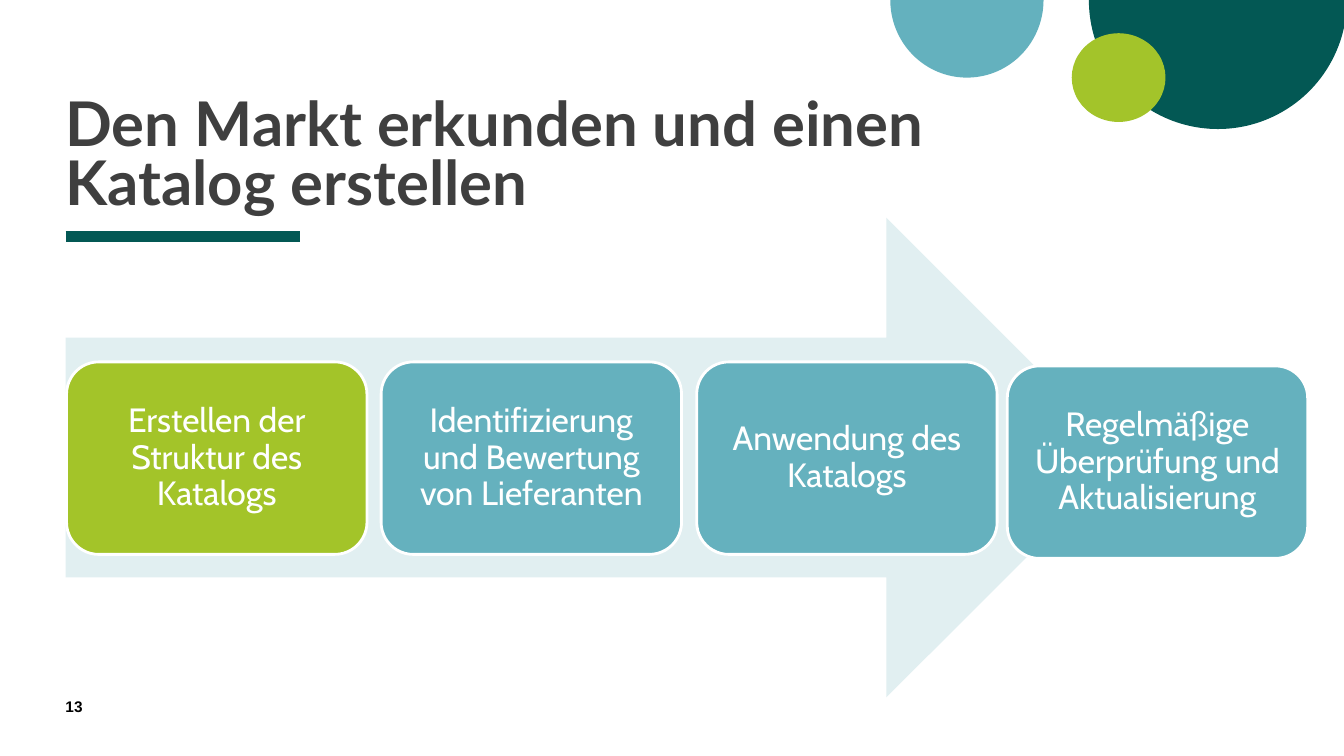
from lxml import etree
from pptx import Presentation
from pptx.dml.color import RGBColor
from pptx.enum.shapes import MSO_CONNECTOR, MSO_SHAPE
from pptx.enum.text import MSO_ANCHOR, PP_ALIGN
from pptx.oxml.ns import qn
from pptx.util import Inches, Pt

PIE, OVAL = MSO_SHAPE.PIE, MSO_SHAPE.OVAL
ARROW, ROUNDED = MSO_SHAPE.RIGHT_ARROW, MSO_SHAPE.ROUNDED_RECTANGLE
STRAIGHT = MSO_CONNECTOR.STRAIGHT
TOP, MIDDLE, BOTTOM = MSO_ANCHOR.TOP, MSO_ANCHOR.MIDDLE, MSO_ANCHOR.BOTTOM
LEFT, CENTER = PP_ALIGN.LEFT, PP_ALIGN.CENTER

DARK_GREEN, TEAL, LIME = "035854", "64B1BE", "A3C42A"
STEP_TEAL, STEP_LIME, PALE, WHITE = "65B1BE", "A3C429", "E1EFF1", "FFFFFF"
HALF_CIRCLE = (0, 108)  # start and end angle, 180 degrees = 108

TITLE = dict(name="Lato", size=Pt(44), bold=True)
NUMBER = dict(name="Arial", size=Pt(11), bold=True)
STEP = dict(name="Cabin", size=Pt(24), bold=False)

STEPS = [
    # left, top, fill, text
    (0.66, 3.59, STEP_LIME, "Erstellen der Struktur des Katalogs"),
    (3.78, 3.59, STEP_TEAL, "Identifizierung und Bewertung von Lieferanten"),
    (6.91, 3.59, STEP_TEAL, "Anwendung des Katalogs"),
    (9.99, 3.63, STEP_TEAL, "Regelmäßige Überprüfung und Aktualisierung"),
]


def rgb(value):
    return RGBColor.from_string(value)


def add_shape(s, kind, box, fill, adjustments=()):
    sp = s.shapes.add_shape(kind, *map(Inches, box))
    sp.shadow.inherit = False
    sp.fill.solid()
    sp.fill.fore_color.rgb = rgb(fill)
    sp.line.fill.background()
    for i, value in enumerate(adjustments):
        sp.adjustments[i] = value
    return sp


def set_text(sp, text, font, color, spacing=1.0, align=LEFT, anchor=TOP, inset=0):
    tf = sp.text_frame
    tf.word_wrap = True
    tf.vertical_anchor = anchor
    for side in ("left", "right", "top", "bottom"):
        setattr(tf, f"margin_{side}", Inches(inset))
    p = tf.paragraphs[0]
    p.alignment = align
    p.line_spacing = spacing
    r = p.add_run()
    r.text = text
    for name, value in font.items():
        setattr(r.font, name, value)
    r.font.color.rgb = rgb(color)


def add_text(s, box, text, font, color, **layout):
    set_text(s.shapes.add_textbox(*map(Inches, box)), text, font, color, **layout)


def add_rule(s, x1, x2, y, color, width):
    line = s.shapes.add_connector(STRAIGHT, *map(Inches, (x1, y, x2, y)))
    line.line.color.rgb = rgb(color)
    line.line.width = Pt(width)
    etree.SubElement(line._element.spPr, qn("a:effectLst"))


def add_step(s, left, top, fill, text):
    sp = add_shape(s, ROUNDED, (left, top, 2.98, 1.91), fill, [0.167])
    sp.line.color.rgb = rgb(WHITE)
    sp.line.width = Pt(2)
    set_text(sp, text, STEP, WHITE, spacing=0.9, align=CENTER, anchor=MIDDLE, inset=0.12)


def main():
    prs = Presentation()
    prs.slide_width, prs.slide_height = Inches(13.33), Inches(7.5)
    s = prs.slides.add_slide(prs.slide_layouts[6])

    add_shape(s, PIE, (10.8, -1.28, 2.56, 2.56), DARK_GREEN, HALF_CIRCLE)
    add_shape(s, PIE, (8.83, -0.77, 1.52, 1.54), TEAL, HALF_CIRCLE)
    add_shape(s, OVAL, (10.63, 0.33, 0.93, 0.88), LIME)
    add_rule(s, 0.65, 2.98, 2.35, DARK_GREEN, 8)

    add_text(s, (0.65, 0.42, 10.2, 1.74), "Den Markt erkunden und einen Katalog erstellen",
             TITLE, "3F3F3F", spacing=0.8, anchor=BOTTOM)
    add_text(s, (0.65, 6.92, 0.57, 0.27), "13", NUMBER, "000000")

    add_shape(s, ARROW, (0.65, 2.16, 10.52, 4.76), PALE, [0.5, 0.5])
    for step in STEPS:
        add_step(s, *step)

    prs.save("out.pptx")


if __name__ == "__main__":
    main()
